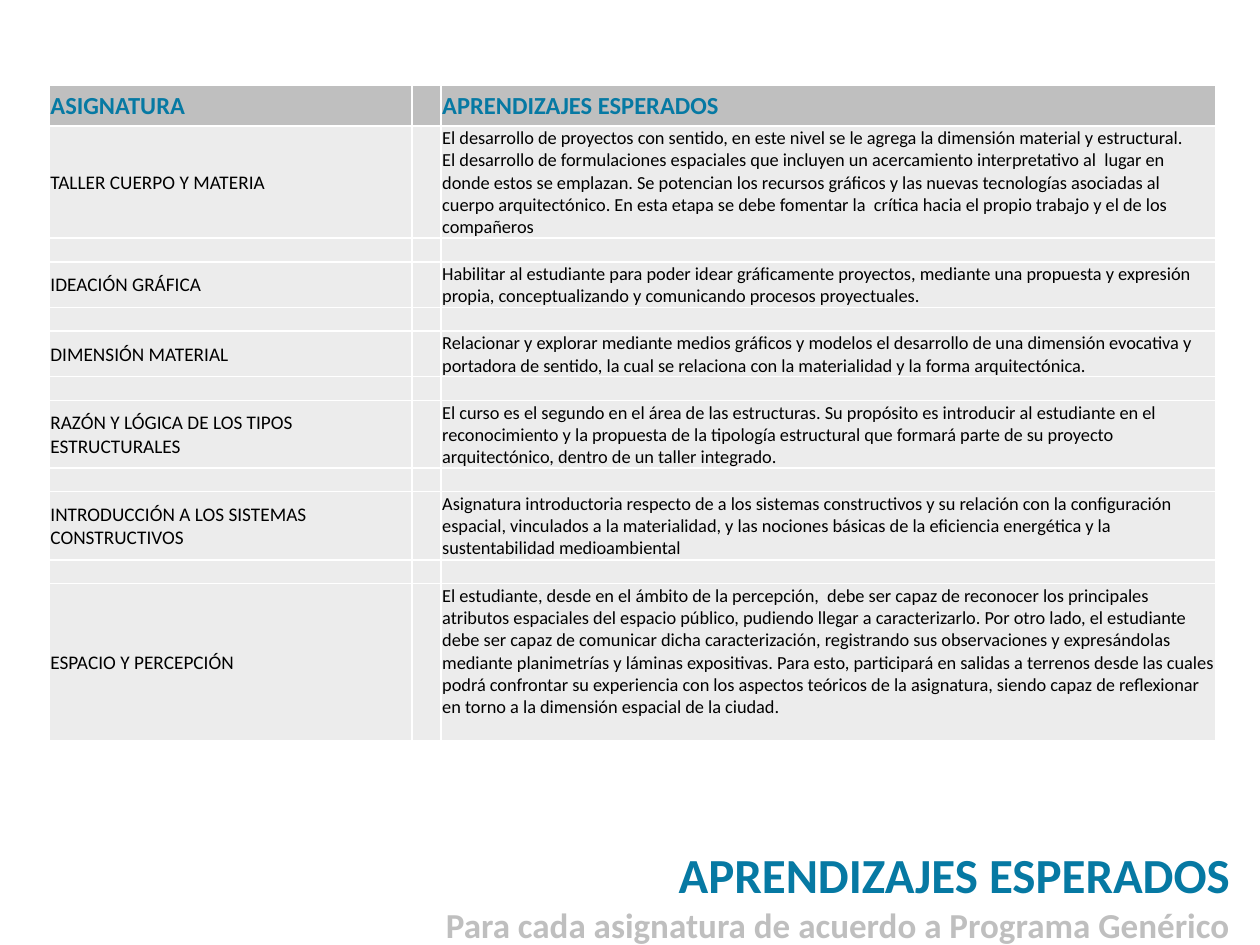
"""Builds the slide of expected learning outcomes for each course."""
from dataclasses import dataclass

from lxml import etree
from pptx import Presentation
from pptx.dml.color import RGBColor
from pptx.enum.text import MSO_ANCHOR, MSO_AUTO_SIZE, PP_ALIGN
from pptx.oxml.ns import qn
from pptx.util import Inches, Pt

MIDDLE, BOTTOM = MSO_ANCHOR.MIDDLE, MSO_ANCHOR.BOTTOM
RIGHT = PP_ALIGN.RIGHT
GROW = MSO_AUTO_SIZE.SHAPE_TO_FIT_TEXT


@dataclass(frozen=True)
class Theme:
    font: str = "Calibri"
    accent: str = "0679A3"
    muted: str = "BFBFBF"
    ink: str = "000000"
    band: str = "ECECEC"
    border: str = "FFFFFF"
    title: float = 28
    subtitle: float = 20
    header: float = 14
    course: float = 11
    body: float = 10.5


class SlideBuilder:
    def __init__(self, slide, theme):
        self.slide, self.theme = slide, theme

    def add_lines(self, tf, lines, align=None):
        for i, (text, size, color, bold) in enumerate(lines):
            p = tf.paragraphs[0] if i == 0 else tf.add_paragraph()
            p.alignment = align
            r = p.add_run()
            r.text = text
            style = {"name": self.theme.font, "size": Pt(size), "bold": bold}
            for name, value in style.items():
                setattr(r.font, name, value)
            r.font.color.rgb = RGBColor.from_string(color)

    def text_box(self, left, top, width, height, lines, align):
        sp = self.slide.shapes.add_textbox(*map(Inches, (left, top, width, height)))
        tf = sp.text_frame
        frame = {"word_wrap": True, "auto_size": GROW,
                 "margin_left": Inches(0.07), "margin_right": Inches(0.07),
                 "margin_top": Inches(0.04), "margin_bottom": Inches(0.04)}
        for name, value in frame.items():
            setattr(tf, name, value)
        self.add_lines(tf, lines, align)

    def cell(self, cell, lines, fill, anchor, bottom=0):
        layout = {"margin_left": Inches(0.01), "margin_right": Inches(0.01),
                  "margin_top": Inches(0.01), "margin_bottom": Inches(bottom),
                  "vertical_anchor": anchor}
        for name, value in layout.items():
            setattr(cell, name, value)
        tcPr = cell._tc.get_or_add_tcPr()
        for side in ("lnL", "lnR", "lnT", "lnB"):
            ln = etree.SubElement(tcPr, qn(f"a:{side}"), w=str(Pt(1)))
            solid = etree.SubElement(ln, qn("a:solidFill"))
            etree.SubElement(solid, qn("a:srgbClr"), val=self.theme.border)
        cell.fill.solid()
        cell.fill.fore_color.rgb = RGBColor.from_string(fill)
        if lines:
            self.add_lines(cell.text_frame, lines)
        else:
            p = cell.text_frame.paragraphs[0]
            size = str(int(self.theme.body * 100))
            etree.SubElement(p._p, qn("a:endParaRPr"), sz=size)

    def table(self, left, top, widths, heights, headers, courses):
        t = self.theme
        shape = self.slide.shapes.add_table(
            len(heights), len(widths), Inches(left), Inches(top),
            Inches(sum(widths)), Inches(sum(heights)))
        table = shape.table
        for column, width in zip(table.columns, widths):
            column.width = Inches(width)
        for row, height in zip(table.rows, heights):
            row.height = Inches(height)

        rows = [[[(text, t.header, t.accent, True)] for text in headers]]
        for i, (course, outcomes) in enumerate(courses):
            if i:
                rows.append([[], []])
            rows.append([[(course, t.course, t.ink, False)],
                         [(text, t.body, t.ink, False) for text in outcomes]])
        for i, (first, last) in enumerate(rows):
            fill = t.band if i else t.muted
            bottom = 0.18 if i == len(rows) - 1 else 0
            self.cell(table.cell(i, 0), first, fill, MIDDLE)
            self.cell(table.cell(i, 1), [], fill, MIDDLE)
            self.cell(table.cell(i, 2), last, fill, BOTTOM if i else MIDDLE, bottom)


HEADERS = ("ASIGNATURA", "APRENDIZAJES ESPERADOS")
COURSES = [
    ("TALLER CUERPO Y MATERIA", [
        "El desarrollo de proyectos con sentido, en este nivel se le agrega la "
        "dimensión material y estructural.",
        "El desarrollo de formulaciones espaciales que incluyen un acercamiento "
        "interpretativo al  lugar en donde estos se emplazan. Se potencian los "
        "recursos gráficos y las nuevas tecnologías asociadas al cuerpo "
        "arquitectónico. En esta etapa se debe fomentar la  crítica hacia el "
        "propio trabajo y el de los compañeros"]),
    ("IDEACIÓN GRÁFICA", [
        "Habilitar al estudiante para poder idear gráficamente proyectos, mediante "
        "una propuesta y expresión propia, conceptualizando y comunicando procesos "
        "proyectuales."]),
    ("DIMENSIÓN MATERIAL", [
        "Relacionar y explorar mediante medios gráficos y modelos el desarrollo de "
        "una dimensión evocativa y portadora de sentido, la cual se relaciona con "
        "la materialidad y la forma arquitectónica."]),
    ("RAZÓN Y LÓGICA DE LOS TIPOS ESTRUCTURALES", [
        "El curso es el segundo en el área de las estructuras. Su propósito es "
        "introducir al estudiante en el reconocimiento y la propuesta de la "
        "tipología estructural que formará parte de su proyecto arquitectónico, "
        "dentro de un taller integrado."]),
    ("INTRODUCCIÓN A LOS SISTEMAS CONSTRUCTIVOS", [
        "Asignatura introductoria respecto de a los sistemas constructivos y su "
        "relación con la configuración espacial, vinculados a la materialidad, y "
        "las nociones básicas de la eficiencia energética y la sustentabilidad "
        "medioambiental"]),
    ("ESPACIO Y PERCEPCIÓN", [
        "El estudiante, desde en el ámbito de la percepción,  debe ser capaz de "
        "reconocer los principales atributos espaciales del espacio público, "
        "pudiendo llegar a caracterizarlo. Por otro lado, el estudiante debe ser "
        "capaz de comunicar dicha caracterización, registrando sus observaciones y "
        "expresándolas mediante planimetrías y láminas expositivas. Para esto, "
        "participará en salidas a terrenos desde las cuales podrá confrontar su "
        "experiencia con los aspectos teóricos de la asignatura, siendo capaz de "
        "reflexionar en torno a la dimensión espacial de la ciudad."]),
]
COURSE_HEIGHTS = (0.89, 0.36, 0.36, 0.53, 0.54, 1.25)
SPACER = 0.19


def main():
    prs = Presentation()
    prs.slide_width, prs.slide_height = Inches(10), Inches(7.5)
    theme = Theme()
    s = SlideBuilder(prs.slides.add_slide(prs.slide_layouts[6]), theme)
    s.text_box(2.69, 6.66, 7.14, 0.88, [
        ("APRENDIZAJES ESPERADOS", theme.title, theme.accent, True),
        ("Para cada asignatura de acuerdo a Programa Genérico",
         theme.subtitle, theme.muted, True)], RIGHT)
    heights = [0.32, COURSE_HEIGHTS[0]]
    for height in COURSE_HEIGHTS[1:]:
        heights += [SPACER, height]
    s.table(0.39, 0.68, (2.88, 0.23, 6.15), heights, HEADERS, COURSES)
    prs.save("out.pptx")


if __name__ == "__main__":
    main()
